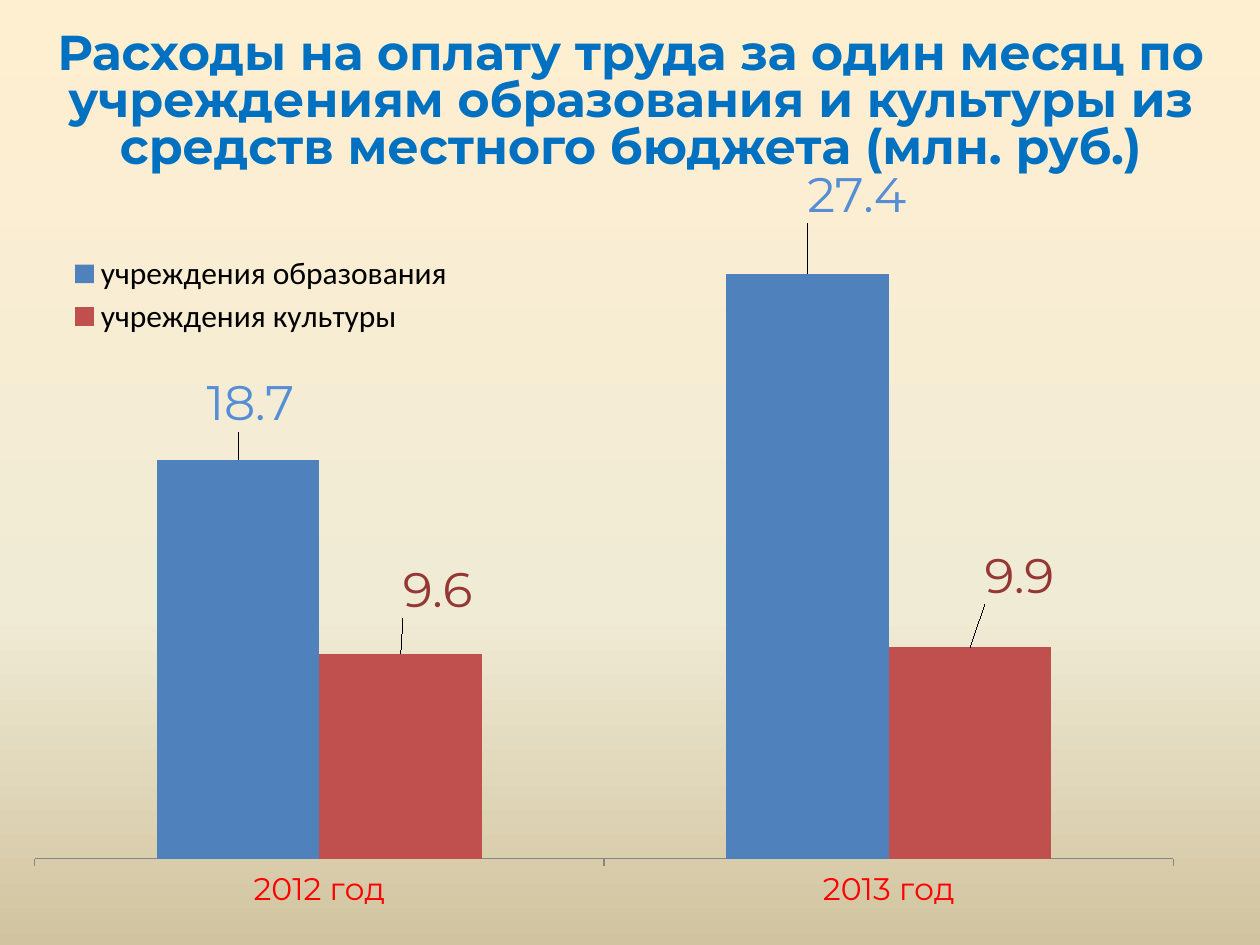
from copy import deepcopy

from lxml import etree
from pptx import Presentation
from pptx import util as u
from pptx.chart.data import CategoryChartData
from pptx.dml.color import RGBColor
from pptx.enum import chart as ch, text
from pptx.oxml.ns import qn

WIDE, HIGH = u.Inches(10), u.Inches(7.5)
FONT = "Montserrat"
TITLE = ("Расходы на оплату труда за один месяц по учреждениям образования "
         "и культуры из средств местного бюджета (млн. руб.)")
YEARS = ["2012 год", "2013 год"]
# name, values, bar colour, label colour, label shifts as shares of the chart
SERIES = [
    ("учреждения образования", (18.7, 27.4), "4F81BD", "558ED5",
     ((0.01, -0.03), (0.04, -0.06))),
    ("учреждения культуры", (9.6, 9.9), "C0504D", "953735",
     ((0.03, -0.04), (0.04, -0.05))),
]


def paint(hue):
    return RGBColor.from_string(hue)


def style(font, size, hue, face=FONT, bold=False):
    font.size, font.name, font.bold = u.Pt(size), face, bold
    font.color.rgb = paint(hue)


def share(box):
    """Turn shares of the slide into lengths."""
    return [int(part * full) for part, full in zip(box, (WIDE, HIGH) * 2)]


def layout(x, y, w=None, h=None, inner=False):
    """Make a manual chart layout; without a size it is an offset."""
    root = etree.Element(qn("c:layout"))
    man = etree.SubElement(root, qn("c:manualLayout"))
    parts = [("x", x), ("y", y)]
    if w is not None:
        parts = [("xMode", "edge"), ("yMode", "edge")] + parts + [("w", w), ("h", h)]
    if inner:
        parts.insert(0, ("layoutTarget", "inner"))
    for tag, val in parts:
        etree.SubElement(man, qn("c:" + tag)).set("val", str(val))
    return root


def place(node, new):
    """Put a layout into a plot area or legend in place of any old one."""
    for old in node.findall(qn("c:layout")):
        node.remove(old)
    pos = node.find(qn("c:legendPos"))
    if pos is None:
        node.insert(0, new)
    else:
        pos.addnext(new)


def back(slide):
    fill = slide.background.fill
    fill.gradient()
    fill.gradient_angle = 270
    last = slide.element.xpath(".//a:gs")[-1]
    last.addnext(deepcopy(last))
    stops = [(0, "FFEFD1"), (0.65, "F0EBD5"), (1, "D1C39F")]
    for stop, (at, hue) in zip(fill.gradient_stops, stops):
        stop.position, stop.color.rgb = at, paint(hue)


def title(slide, box):
    frame = slide.shapes.add_textbox(*share(box)).text_frame
    frame.word_wrap = True
    frame.text = TITLE
    para = frame.paragraphs[0]
    para.alignment = text.PP_ALIGN.CENTER
    para.line_spacing = 0.8
    style(para.runs[0].font, 28, "0070C0", bold=True)


def bars(slide, box):
    data = CategoryChartData()
    data.categories = YEARS
    for name, vals, *_ in SERIES:
        data.add_series(name, vals)
    kind = ch.XL_CHART_TYPE.COLUMN_CLUSTERED
    chart = slide.shapes.add_chart(kind, *share(box), data).chart
    style(chart.font, 18, "000000", "Calibri")
    chart.has_title = False
    axes(chart)
    plot = chart.plots[0]
    plot.gap_width, plot.overlap, plot.vary_by_categories = 150, 0, False
    for row, (_, _, hue, ink, shifts) in zip(plot.series, SERIES):
        row.format.fill.solid()
        row.format.fill.fore_color.rgb = paint(hue)
        row.invert_if_negative = False
        style(row.data_labels.font, 28, ink)
        row.data_labels.show_value = True
        for i, shift in enumerate(shifts):
            label = row.points[i].data_label
            style(label.font, 28, ink)
            label.position = ch.XL_LABEL_POSITION.OUTSIDE_END
        for node, shift in zip(row.data_labels._element.findall(qn("c:dLbl")), shifts):
            node.find(qn("c:idx")).addnext(layout(*shift))
    chart.has_legend = True
    key = chart.legend
    key.position, key.include_in_layout = ch.XL_LEGEND_POSITION.RIGHT, False
    style(key.font, 18, "000000", "Calibri")
    place(key._element, layout(0.03, 0.1, 0.34, 0.12))
    area = chart._chartSpace.find(".//" + qn("c:plotArea"))
    place(area, layout(0.016, 0.03, 0.926, 0.877, True))


def axes(chart):
    cat, val = chart.category_axis, chart.value_axis
    style(cat.tick_labels.font, 18, "FF0000")
    cat.major_tick_mark = ch.XL_TICK_MARK.OUTSIDE
    cat.format.line.color.rgb = paint("868686")
    val.visible = val.has_major_gridlines = False
    val.minimum_scale, val.maximum_scale = 0, 31


def main():
    deck = Presentation()
    deck.slide_width, deck.slide_height = WIDE, HIGH
    slide = deck.slides.add_slide(deck.slide_layouts[6])
    back(slide)
    title(slide, (0.028, 0.028, 0.945, 0.164))
    bars(slide, (0.012, 0.175, 0.976, 0.808))
    deck.save("out.pptx")


if __name__ == "__main__":
    main()
